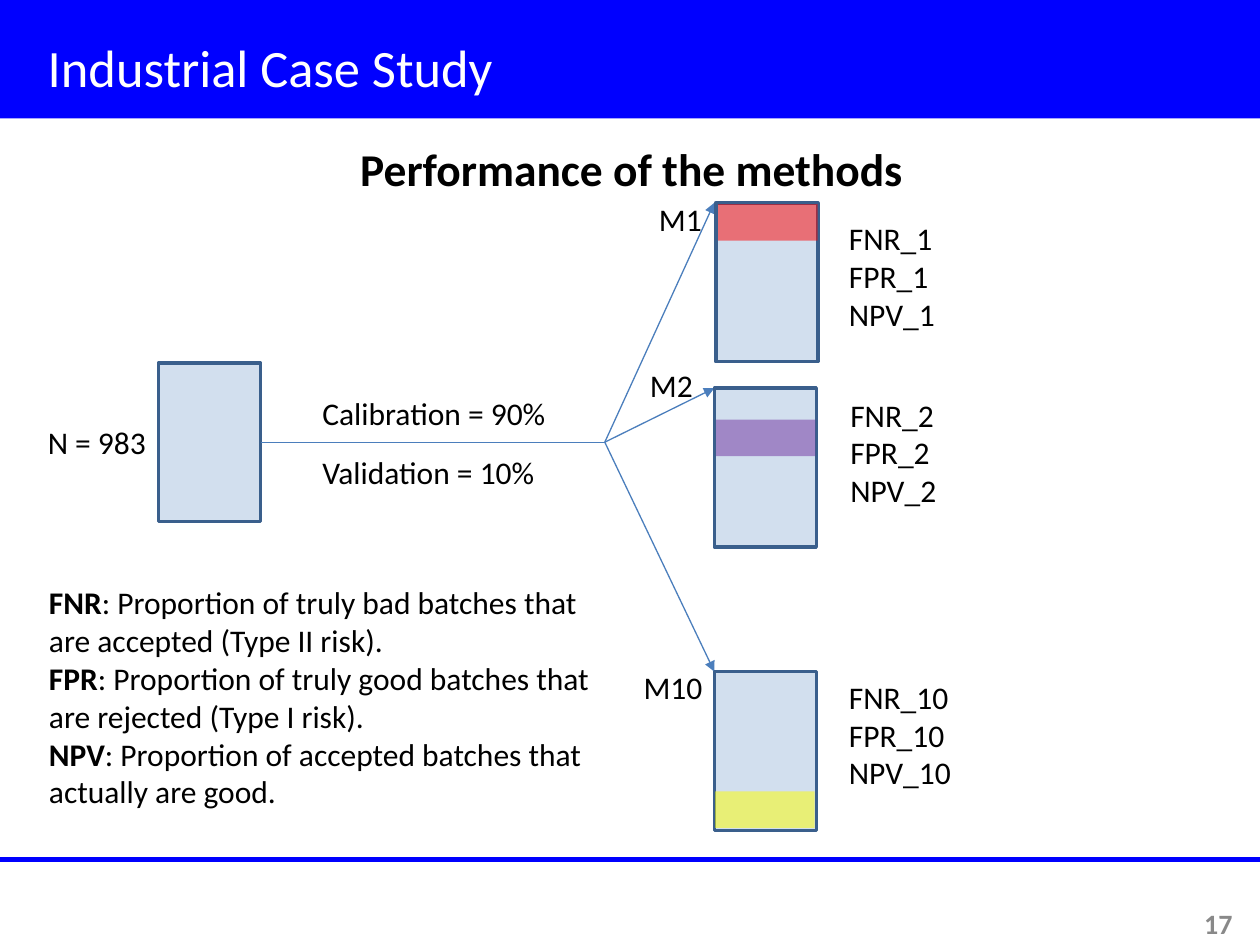
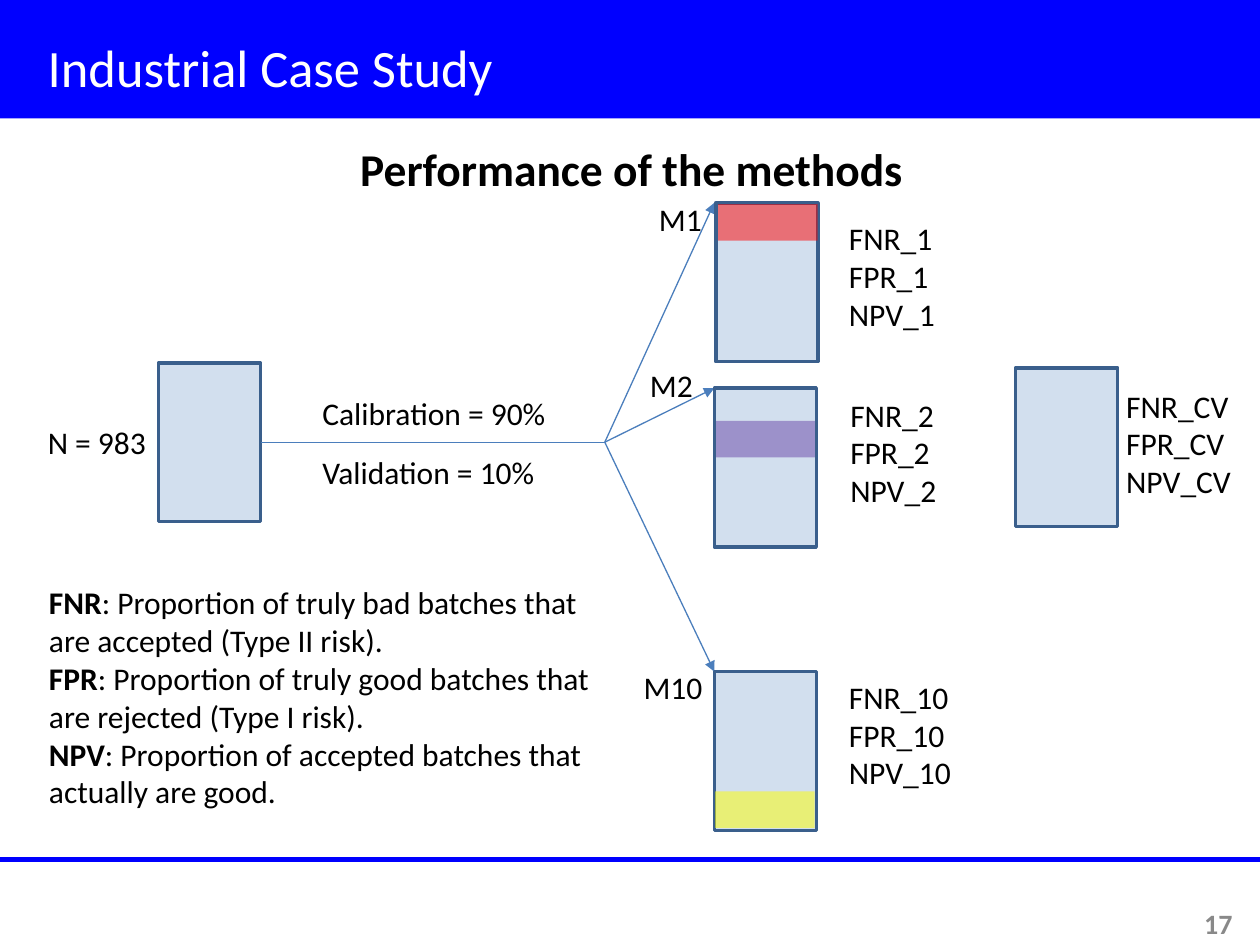
from dataclasses import dataclass
from lxml.etree import SubElement
from pptx import Presentation
from pptx.dml.color import RGBColor
from pptx.enum.shapes import MSO_CONNECTOR, MSO_SHAPE
from pptx.enum.text import MSO_ANCHOR, MSO_AUTO_SIZE, PP_ALIGN
from pptx.oxml.ns import qn
from pptx.util import Pt


@dataclass(frozen=True)
class Theme:
    font: str = "Calibri"
    blue: str = "0000FF"
    white: str = "FFFFFF"
    black: str = "000000"
    grey: str = "898989"
    steel: str = "4F81BD"
    edge: str = "3A5F8C"
    arrow: str = "4B7EBC"
    red: str = "FF0000"
    purple: str = "7030A0"
    yellow: str = "FFFF00"
    title: int = 30
    head: int = 26
    body: int = 18
    foot: int = 16


BOX = (58.3, 90.7)
STRIP = (56.9, 20.9)
FORK = (345.6, 252.7)
TERMS = [
    ("FNR", ": Proportion of truly bad batches that are accepted (Type II risk)."),
    ("FPR", ": Proportion of truly good batches that are rejected (Type I risk)."),
    ("NPV", ": Proportion of accepted batches that actually are good."),
]


class Deck:
    def __init__(self, theme):
        self.theme = theme
        self.prs = Presentation()
        self.prs.slide_width, self.prs.slide_height = Pt(720), Pt(540)
        self.slide = None

    def start(self):
        t = self.theme
        self.slide = self.prs.slides.add_slide(self.prs.slide_layouts[6])
        self.rect((0, 0, 720, 67.7), t.blue)
        self.line((0, 491), (720, 491), t.blue, 3)
        self.text((20.2, 0, 674.6, 75.6), ["Industrial Case Study"], t.title,
                  t.white, wrap=True, anchor=MSO_ANCHOR.MIDDLE)
        self.text((198.7, 77, 327.6, 38.9), ["Performance of the methods"],
                  t.head, bold=True)
        self.text((626.4, 513.4, 85, 28.8), ["17"], t.foot, t.grey, True, True,
                  PP_ALIGN.RIGHT, MSO_ANCHOR.MIDDLE)

    def rect(self, area, fill, alpha=100, edge=None):
        shape = self.slide.shapes.add_shape(MSO_SHAPE.RECTANGLE, *map(Pt, area))
        shape.shadow.inherit = False
        shape.fill.solid()
        shape.fill.fore_color.rgb = RGBColor.from_string(fill)
        if alpha < 100:
            tone = shape.fill._xPr.find(qn("a:solidFill"))[0]
            SubElement(tone, qn("a:alpha"), val=str(alpha * 1000))
        if edge:
            shape.line.color.rgb = RGBColor.from_string(edge)
            shape.line.width = Pt(2)
        else:
            shape.line.fill.background()

    def batch(self, left, top):
        self.rect((left, top, *BOX), self.theme.steel, 25, self.theme.edge)

    def strip(self, left, top, fill):
        self.rect((left, top, *STRIP), fill, 50)

    def line(self, start, end, color, width=0.75, head=False):
        link = self.slide.shapes.add_connector(
            MSO_CONNECTOR.STRAIGHT, *map(Pt, (*start, *end)))
        link.line.color.rgb = RGBColor.from_string(color)
        link.line.width = Pt(width)
        props = link._element.spPr
        if head:
            SubElement(props.find(qn("a:ln")), qn("a:tailEnd"), type="triangle")
        SubElement(props, qn("a:effectLst"))

    def text(self, area, lines, size=None, color=None, bold=False, wrap=False,
             align=PP_ALIGN.LEFT, anchor=MSO_ANCHOR.TOP):
        frame = self.slide.shapes.add_textbox(*map(Pt, area)).text_frame
        frame.word_wrap = wrap
        frame.auto_size = MSO_AUTO_SIZE.NONE if wrap else MSO_AUTO_SIZE.SHAPE_TO_FIT_TEXT
        frame.vertical_anchor = anchor
        for i, line in enumerate(lines):
            para = frame.add_paragraph() if i else frame.paragraphs[0]
            para.alignment = align
            font = para.font
            font.name = self.theme.font
            font.size = Pt(size or self.theme.body)
            font.color.rgb = RGBColor.from_string(color or self.theme.black)
            if isinstance(line, str):
                font.bold = bold
                para.add_run().text = line
            else:
                for part, strong in zip(line, (True, False)):
                    run = para.add_run()
                    run.text = part
                    run.font.bold = strong

    def rates(self, left, top, width, tag):
        names = [f"{term}_{tag}" for term, _ in TERMS]
        self.text((left, top, width, 72.7), names)

    def split(self):
        self.batch(90.5, 207.4)
        self.text((20.2, 238.3, 71.3, 28.8), ["N = 983"])
        self.text((177.1, 221.8, 143.3, 28.8), ["Calibration = 90%"])
        self.text((177.1, 255.6, 137.5, 28.8), ["Validation = 10%"])
        self.line((149, FORK[1]), FORK, self.theme.arrow)
        self.text((20.9, 329.8, 332.6, 138.2), TERMS, wrap=True)

    def fold(self, tag, box, label, rates):
        self.line(FORK, (408.2, box[1]), self.theme.arrow, head=True)
        self.batch(*box)
        self.text((*label, 28.8), [f"M{tag}"])
        self.rates(*rates, tag)

    def study(self, cross=False):
        t = self.theme
        self.start()
        if cross:
            self.batch(580.3, 210.2)
            self.rates(636.5, 217.4, 74.9, "CV")
            self.strip(409, 240.5, t.purple)
        self.split()
        self.fold(1, (409, 115.9), (369.4, 110.9, 39.6), (478, 121.7, 64.1))
        self.fold(2, (408.2, 221.8), (364.3, 205.9, 39.6), (478.8, 222.5, 64.1))
        self.fold(10, (408.2, 383.8), (360.7, 378, 48.2), (478, 383.8, 73.4))
        self.strip(410.4, 116.6, t.red)
        if not cross:
            self.strip(409, 239.8, t.purple)
        self.strip(408.6, 452.2, t.yellow)


def main():
    deck = Deck(Theme())
    deck.study()
    deck.study(cross=True)
    deck.prs.save("out.pptx")


if __name__ == "__main__":
    main()
